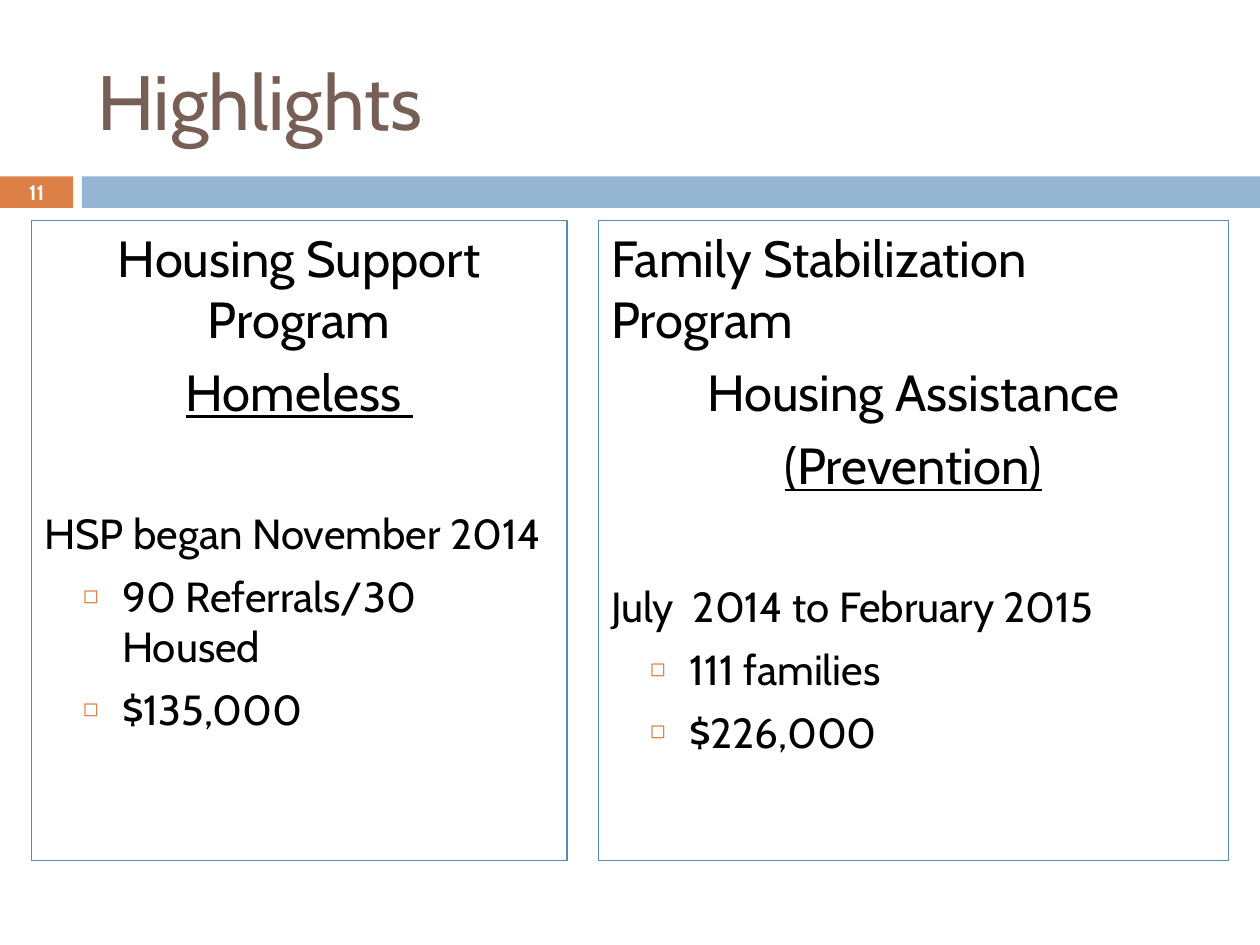
import pptx
import pptx.util
import pptx.dml.color
import pptx.enum.text
import pptx.enum.shapes
import lxml.etree

Inches, Pt = pptx.util.Inches, pptx.util.Pt
Align = pptx.enum.text.PP_ALIGN
Anchor = pptx.enum.text.MSO_ANCHOR

HUES = {"title": "775F55", "text": "000000", "orange": "DD8047",
        "blue": "94B6D2", "edge": "558BB8", "white": "FFFFFF"}
FONT = "Cabin"
GAP = 7
BREAK = 49

HEAD = {"size": 29, "before": GAP}
MID = {**HEAD, "align": Align.CENTER}
LINED = {**MID, "under": True}
DATE = {"size": 24, "before": BREAK}
ITEM = {"size": 24, "before": GAP, "mark": "◻"}

TITLE = "Highlights"
PAGE = "11"
PANELS = [
    (0.25, 4.25, 0.75, [
        ("Housing Support Program", MID),
        ("Homeless ", LINED),
        ("HSP began November 2014", DATE),
        ("90 Referrals/30 Housed", ITEM),
        ("$135,000", ITEM),
    ]),
    (4.75, 5, 0.25, [
        ("Family Stabilization Program", HEAD),
        ("Housing Assistance", MID),
        ("(Prevention)", LINED),
        ("July  2014 to February 2015", DATE),
        ("111 families", ITEM),
        ("$226,000", ITEM),
    ]),
]
BARS = [(0, 0.58, "orange"), (0.65, 9.35, "blue")]


def paint(name):
    return pptx.dml.color.RGBColor.from_string(HUES[name])


def place(shape, *box):
    shape.left, shape.top, shape.width, shape.height = map(Inches, box)


def node(base, tag, **attrs):
    name = pptx.oxml.ns.qn("a:" + tag)
    return lxml.etree.SubElement(base, name, attrs)


def write(para, text, size=24, hue="text", align=Align.LEFT, before=0,
          bold=False, under=None, mark=None):
    para.alignment = align
    para.space_before = Pt(before)
    props = para._p.get_or_add_pPr()
    props.set("marL", str(Inches(0.62 if mark else 0)))
    props.set("indent", str(Inches(-0.31 if mark else 0)))
    if mark:
        node(node(props, "buClr"), "srgbClr", val=HUES["orange"])
        node(props, "buSzPct", val="60000")
        node(props, "buChar", char=mark)
    else:
        node(props, "buNone")
    run = para.add_run()
    run.text = text
    font = run.font
    font.name, font.size = FONT, Pt(size)
    font.bold, font.underline = bold, under
    font.color.rgb = paint(hue)


def frame(shape, anchor):
    body = shape.text_frame
    body.word_wrap = True
    body.auto_size = pptx.enum.text.MSO_AUTO_SIZE.NONE
    body.vertical_anchor = anchor
    return body


def main():
    deck = pptx.Presentation()
    deck.slide_width, deck.slide_height = Inches(10), Inches(7.5)
    slide = deck.slides.add_slide(deck.slide_layouts[3])
    title, *bodies = slide.placeholders

    for left, width, hue in BARS:
        bar = slide.shapes.add_shape(
            pptx.enum.shapes.MSO_SHAPE.RECTANGLE,
            Inches(left), Inches(1.4), Inches(width), Inches(0.25))
        bar.shadow.inherit = False
        bar.fill.solid()
        bar.fill.fore_color.rgb = paint(hue)
        bar.line.fill.background()

    place(title, 0.67, 0.25, 8.92, 1.08)
    write(frame(title, Anchor.MIDDLE).paragraphs[0], TITLE,
          size=44, hue="title")

    for shape, (left, width, edge, rows) in zip(bodies, PANELS):
        place(shape, left, 1.75, width, 5.08)
        shape.line.color.rgb = paint("edge")
        shape.line.width = Pt(edge)
        body = frame(shape, Anchor.TOP)
        for i, (text, style) in enumerate(rows):
            para = body.add_paragraph() if i else body.paragraphs[0]
            write(para, text, **style)

    page = slide.shapes.add_textbox(
        Inches(0), Inches(1.39), Inches(0.58), Inches(0.27))
    write(frame(page, Anchor.MIDDLE).paragraphs[0], PAGE,
          size=11.9, hue="white", align=Align.CENTER, bold=True)

    deck.save("out.pptx")


if __name__ == "__main__":
    main()
